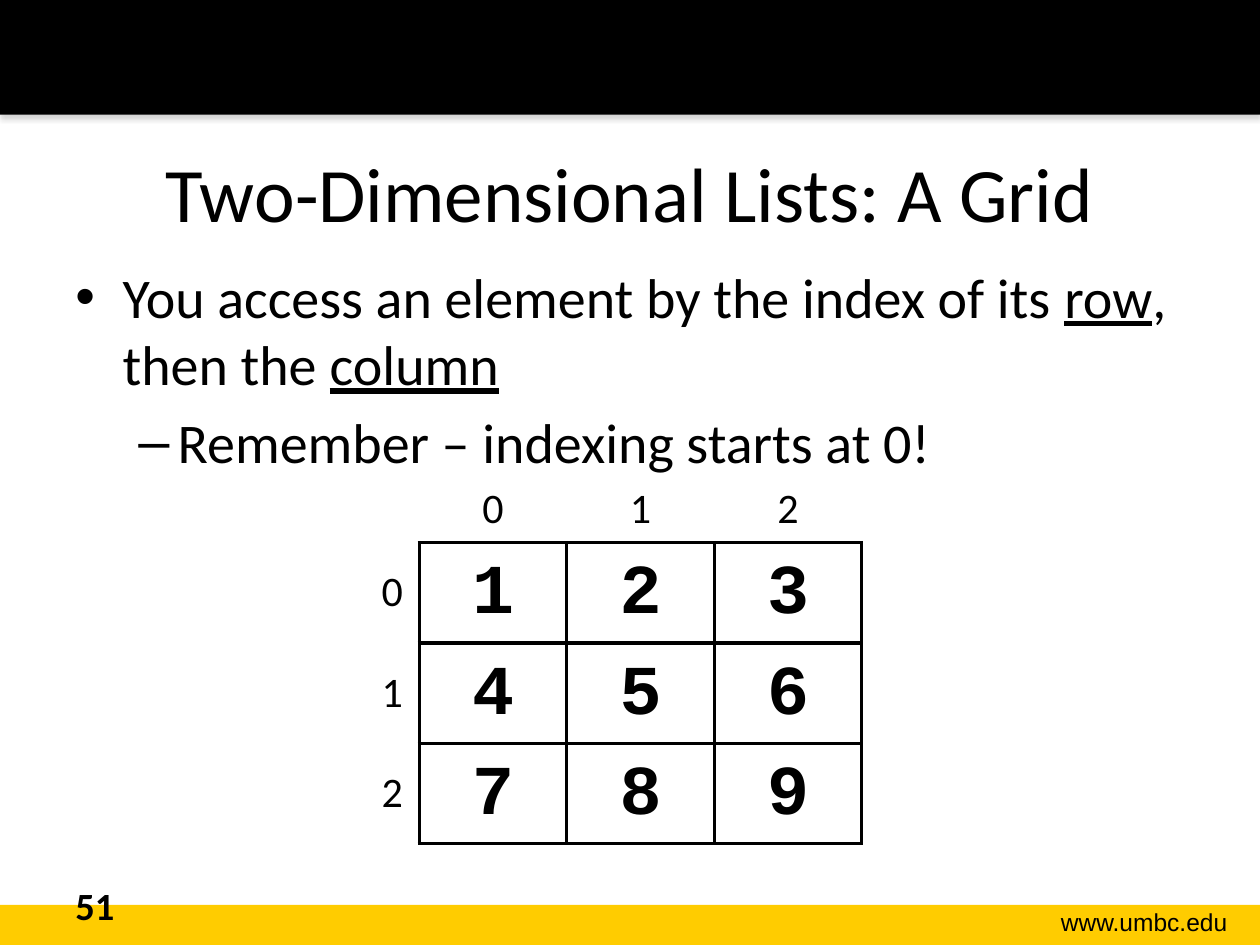
import pptx
import pptx.dml.color
import pptx.enum.shapes
import pptx.enum.text
import pptx.oxml
import pptx.oxml.ns
import pptx.util

Pt = pptx.util.Pt
RGBColor = pptx.dml.color.RGBColor
ALIGN = pptx.enum.text.PP_ALIGN
ANCHOR = pptx.enum.text.MSO_ANCHOR

BLACK = RGBColor(0x00, 0x00, 0x00)
WHITE = RGBColor(0xFF, 0xFF, 0xFF)
GOLD = RGBColor(0xFF, 0xCC, 0x00)
NAMESPACE = pptx.oxml.ns.nsdecls("a")


class SlideBuilder:
    body_font = "Calibri"
    code_font = "Courier New"
    footer_font = "Arial"
    border_width = 2.25

    def __init__(self, page):
        self.page = page

    def format_paragraph(self, para, size, font=None, bold=False, align=ALIGN.LEFT):
        para.alignment = align
        para.font.size = Pt(size)
        para.font.name = font or self.body_font
        para.font.bold = bold
        para.font.color.rgb = BLACK

    def title(self, text, left, top, width, height):
        box = self.page.shapes.title
        box.left, box.top, box.width, box.height = map(Pt, (left, top, width, height))
        box.text_frame.text = text
        box.text_frame.vertical_anchor = ANCHOR.MIDDLE
        self.format_paragraph(box.text_frame.paragraphs[0], 44, align=ALIGN.CENTER)

    def bar(self, top, height, color):
        bar = self.page.shapes.add_shape(
            pptx.enum.shapes.MSO_SHAPE.RECTANGLE, 0, Pt(top), Pt(720), Pt(height))
        bar.shadow.inherit = False
        bar.fill.solid()
        bar.fill.fore_color.rgb = color
        bar.line.fill.background()
        return bar

    def soft_shadow(self, shape, blur, distance):
        effects = shape._element.spPr.find(pptx.oxml.ns.qn("a:effectLst"))
        effects.append(pptx.oxml.parse_xml(
            f'<a:outerShdw {NAMESPACE} blurRad="{Pt(blur)}" dist="{Pt(distance)}" '
            'dir="5400000" rotWithShape="0"><a:srgbClr val="808080">'
            '<a:alpha val="35000"/></a:srgbClr></a:outerShdw>'))

    def text_box(self, left, top, width, height):
        box = self.page.shapes.add_textbox(Pt(left), Pt(top), Pt(width), Pt(height))
        box.text_frame.word_wrap = True
        return box.text_frame

    def label(self, text, left, top, width, height, size, **style):
        para = self.text_box(left, top, width, height).paragraphs[0]
        para.text = text
        self.format_paragraph(para, size, **style)

    def bullets(self, items, left, top, width, height):
        """Each item is (level, bullet, margin, hanging, [(text, underlined)])."""
        frame = self.text_box(left, top, width, height)
        for index, (level, bullet, margin, hanging, spans) in enumerate(items):
            para = frame.add_paragraph() if index else frame.paragraphs[0]
            para.level = level
            if index:
                para.space_before = Pt(6.4)
            properties = para._p.get_or_add_pPr()
            properties.set("marL", str(Pt(margin)))
            properties.set("indent", str(-Pt(hanging)))
            properties.append(pptx.oxml.parse_xml(
                f'<a:buFont {NAMESPACE} typeface="Arial"/>'))
            properties.append(pptx.oxml.parse_xml(
                f'<a:buChar {NAMESPACE} char="{bullet}"/>'))
            self.format_paragraph(para, 32)
            for text, underlined in spans:
                span = para.add_run()
                span.text = text
                if underlined:
                    span.font.underline = True

    def cell_borders(self, cell, visible_sides):
        properties = cell._tc.get_or_add_tcPr()
        for side in "LRTB":
            if side in visible_sides:
                width = Pt(self.border_width)
                paint = f'<a:solidFill><a:srgbClr val="{BLACK}"/></a:solidFill>'
            else:
                width, paint = 0, "<a:noFill/>"
            properties.append(pptx.oxml.parse_xml(
                f'<a:ln{side} {NAMESPACE} w="{width}">{paint}</a:ln{side}>'))

    def indexed_grid(self, values, left, top, column_width, header_height, row_height):
        """A bordered grid with unbordered index labels above and to the left."""
        row_count, column_count = len(values) + 1, len(values[0]) + 1
        table = self.page.shapes.add_table(
            row_count, column_count, Pt(left), Pt(top),
            Pt(column_width * column_count),
            Pt(header_height + row_height * len(values))).table
        table.first_row = table.horz_banding = False
        for column in table.columns:
            column.width = Pt(column_width)
        for index, row in enumerate(table.rows):
            row.height = Pt(row_height if index else header_height)

        for r in range(row_count):
            for c in range(column_count):
                cell = table.cell(r, c)
                cell.margin_left = cell.margin_right = Pt(9.4)
                cell.margin_top = cell.margin_bottom = Pt(4.7)
                cell.vertical_anchor = ANCHOR.BOTTOM
                para = cell.text_frame.paragraphs[0]
                if r and c:
                    sides = "LRTB"
                    para.text = str(values[r - 1][c - 1])
                    self.format_paragraph(para, 40, self.code_font, True, ALIGN.CENTER)
                elif r:
                    sides = "R"
                    para.text = str(r - 1)
                    cell.vertical_anchor = ANCHOR.MIDDLE
                    self.format_paragraph(para, 24, align=ALIGN.RIGHT)
                else:
                    sides = "B" if c else ""
                    para.text = str(c - 1) if c else ""
                    self.format_paragraph(para, 24, align=ALIGN.CENTER)
                self.cell_borders(cell, sides)
                if r or not c:
                    cell.fill.solid()
                    cell.fill.fore_color.rgb = WHITE
                else:
                    cell.fill.background()


def main():
    deck = pptx.Presentation()
    deck.slide_width, deck.slide_height = Pt(720), Pt(540)
    builder = SlideBuilder(deck.slides.add_slide(deck.slide_layouts[5]))

    # Bars and web address
    builder.bar(517, 23, GOLD)
    header = builder.bar(0, 65.5, BLACK)
    builder.soft_shadow(header, 3.1, 1.8)
    builder.label("www.umbc.edu", 565.2, 514.8, 143.3, 24.5, 14,
                  font=builder.footer_font, align=ALIGN.RIGHT)

    # Title and bullets
    builder.title("Two-Dimensional Lists: A Grid", 36, 64.8, 648, 90)
    builder.bullets([
        (0, "•", 27, 27, [("You access an element by the index of its ", False),
                          ("row", True), (", then the ", False), ("column", True)]),
        (1, "–", 58.5, 22.5, [("Remember – indexing starts at 0!", False)]),
    ], 36, 146.2, 648, 327.6)

    # Page number
    builder.label("51", 36, 500.4, 168, 28.8, 22, bold=True)

    # Grid with row and column indexes
    builder.indexed_grid([[1, 2, 3], [4, 5, 6], [7, 8, 9]],
                         155.3, 271.5, 84.3, 38.5, 54.7)

    deck.save("out.pptx")


if __name__ == "__main__":
    main()
